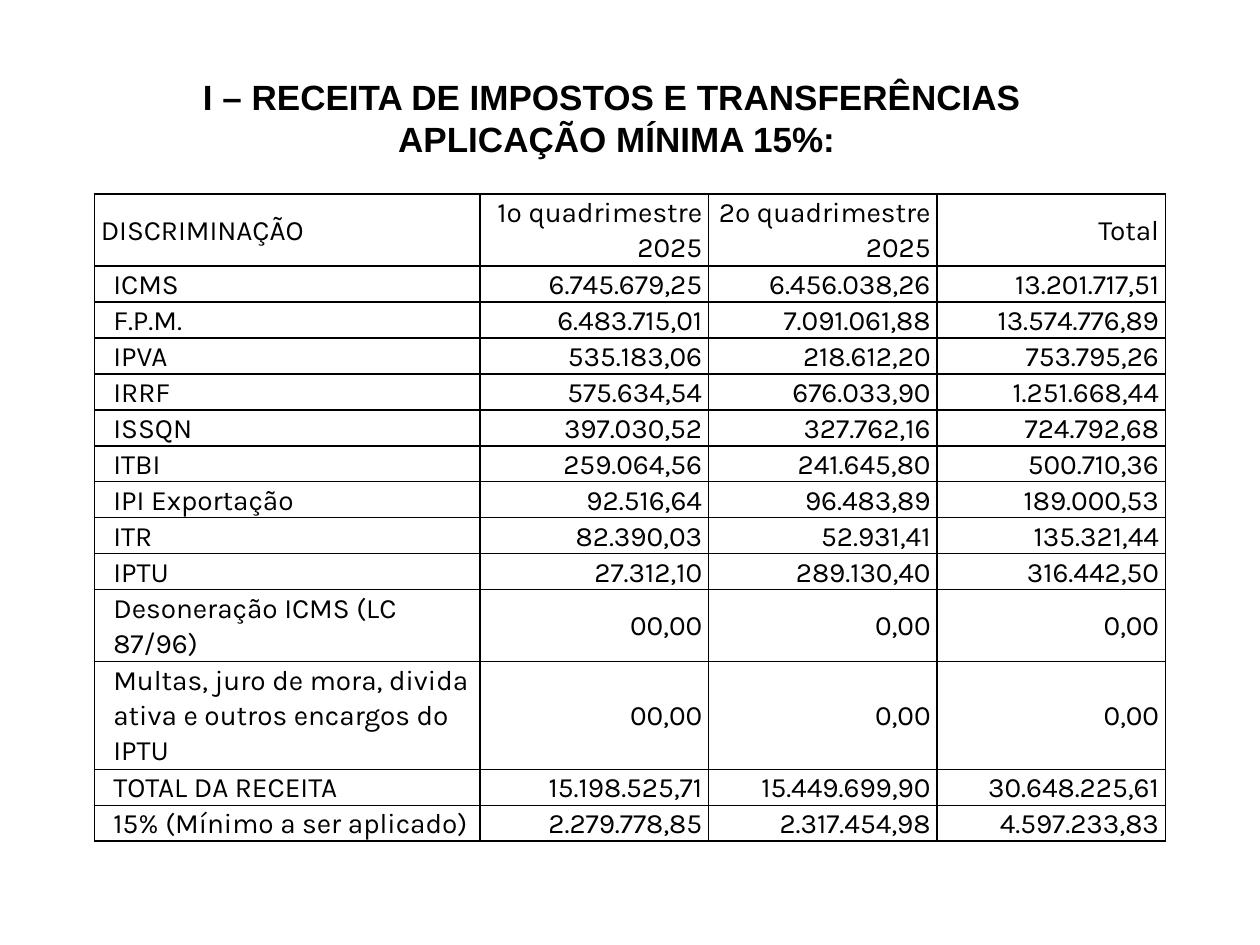
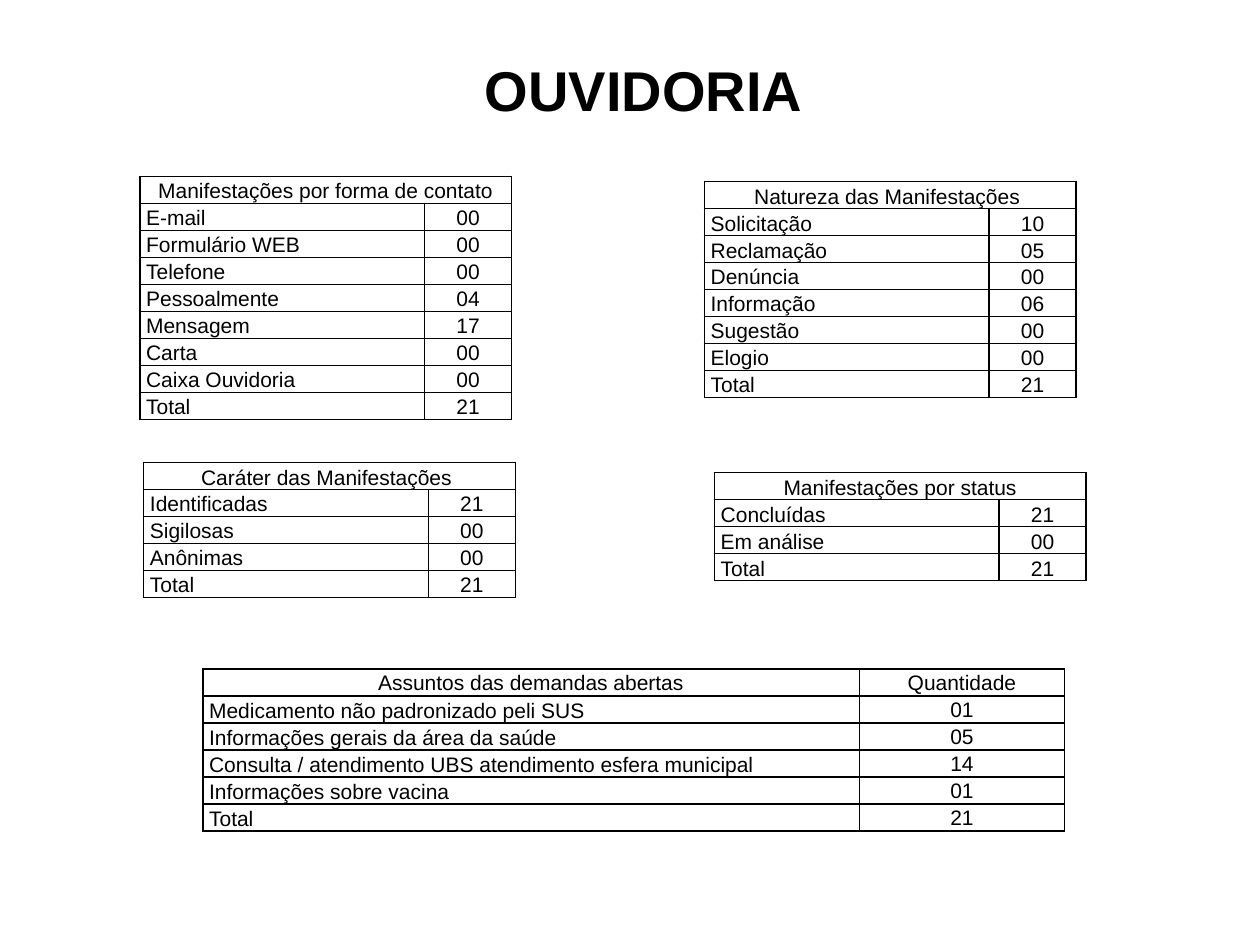
from dataclasses import dataclass

import pptx
import pptx.dml.color
import pptx.enum.text
import pptx.oxml
import pptx.oxml.ns
import pptx.slide
import pptx.table
import pptx.text.text
import pptx.util

Inches = pptx.util.Inches
RGBColor = pptx.dml.color.RGBColor
Align = pptx.enum.text.PP_ALIGN
Anchor = pptx.enum.text.MSO_ANCHOR

BLACK = RGBColor(0x00, 0x00, 0x00)
TITLE_FONT = "Arial"
CELL_MARGIN = 0.05
BORDER_WIDTH = pptx.util.Pt(1)
BORDER_SIDES = ("lnL", "lnR", "lnT", "lnB")


@dataclass(frozen=True)
class Title:
    left: float
    top: float
    width: float
    height: float
    text: str
    size: int
    align: Align
    wrap: bool


@dataclass(frozen=True)
class GridStyle:
    font: str
    size: int
    line_height: float
    header_aligns: tuple[Align, ...]
    value_align: Align
    label_anchor: Anchor
    value_anchor: Anchor
    header_anchor: Anchor
    label_indent: float = 0
    label_column: int = 0


@dataclass(frozen=True)
class Grid:
    left: float
    top: float
    widths: tuple[float, ...]
    header: tuple[str, ...]
    rows: tuple[tuple[str, ...], ...]
    style: GridStyle
    tall_rows: tuple[tuple[int, int], ...] = ()


REVENUE_STYLE = GridStyle(
    "Karla", 16, 0.28, (Align.LEFT, Align.RIGHT, Align.RIGHT, Align.RIGHT),
    Align.RIGHT, Anchor.MIDDLE, Anchor.MIDDLE, Anchor.MIDDLE, label_indent=0.1,
)
COUNT_STYLE = GridStyle(
    "Arial", 12, 0.21, (Align.CENTER,),
    Align.CENTER, Anchor.BOTTOM, Anchor.BOTTOM, Anchor.BOTTOM,
)
SUBJECT_STYLE = GridStyle(
    "Arial", 12, 0.21, (Align.CENTER, Align.CENTER),
    Align.CENTER, Anchor.BOTTOM, Anchor.MIDDLE, Anchor.MIDDLE, label_column=1,
)
REVENUE_WIDTH = 8.5
REVENUE_LABEL_WIDTH = 3.06
REVENUE_VALUE_WIDTH = (REVENUE_WIDTH - REVENUE_LABEL_WIDTH) / 3
COUNT_WIDTHS = (2.26, 0.69)

REVENUE_TITLE = Title(
    1.48, 0.55, 6.83, 0.77,
    "I – RECEITA DE IMPOSTOS E TRANSFERÊNCIAS \nAPLICAÇÃO MÍNIMA 15%:",
    20, Align.CENTER, False,
)
OMBUDSMAN_TITLE = Title(3.75, 0.39, 3.59, 0.64, "OUVIDORIA", 32, Align.LEFT, True)

REVENUE = Grid(
    0.75, 1.54, (REVENUE_LABEL_WIDTH, *[REVENUE_VALUE_WIDTH] * 3),
    ("DISCRIMINAÇÃO", "1º quadrimestre 2025", "2º quadrimestre 2025", "Total"),
    (
        ("ICMS", "6.745.679,25", "6.456.038,26", "13.201.717,51"),
        ("F.P.M.", "6.483.715,01", "7.091.061,88", "13.574.776,89"),
        ("IPVA", "535.183,06", "218.612,20", "753.795,26"),
        ("IRRF", "575.634,54", "676.033,90", "1.251.668,44"),
        ("ISSQN", "397.030,52", "327.762,16", "724.792,68"),
        ("ITBI", "259.064,56", "241.645,80", "500.710,36"),
        ("IPI Exportação", "92.516,64", "96.483,89", "189.000,53"),
        ("ITR", "82.390,03", "52.931,41", "135.321,44"),
        ("IPTU", "27.312,10", "289.130,40", "316.442,50"),
        ("Desoneração ICMS (LC 87/96)", "00,00", "0,00", "0,00"),
        ("Multas, juro de mora, divida ativa e outros encargos do IPTU",
         "00,00", "0,00", "0,00"),
        ("TOTAL DA RECEITA", "15.198.525,71", "15.449.699,90", "30.648.225,61"),
        ("15% (Mínimo a ser aplicado)", "2.279.778,85", "2.317.454,98", "4.597.233,83"),
    ),
    REVENUE_STYLE,
    tall_rows=((0, 2), (10, 2), (11, 3)),
)

OMBUDSMAN_GRIDS = (
    Grid(
        1.11, 1.4, COUNT_WIDTHS, ("Manifestações por forma de contato",),
        (
            ("E-mail", "00"), ("Formulário WEB", "00"), ("Telefone", "00"),
            ("Pessoalmente", "04"), ("Mensagem", "17"), ("Carta", "00"),
            ("Caixa Ouvidoria", "00"), ("Total", "21"),
        ),
        COUNT_STYLE,
    ),
    Grid(
        5.59, 1.44, COUNT_WIDTHS, ("Natureza das Manifestações ",),
        (
            ("Solicitação", "10"), ("Reclamação", "05"), ("Denúncia", "00"),
            ("Informação", "06"), ("Sugestão", "00"), ("Elogio", "00"), ("Total", "21"),
        ),
        COUNT_STYLE,
    ),
    Grid(
        1.14, 3.67, COUNT_WIDTHS, ("Caráter das Manifestações ",),
        (("Identificadas", "21"), ("Sigilosas", "00"), ("Anônimas", "00"), ("Total", "21")),
        COUNT_STYLE,
    ),
    Grid(
        5.67, 3.75, COUNT_WIDTHS, ("Manifestações por status",),
        (("Concluídas", "21"), ("Em análise", "00"), ("Total", "21")),
        COUNT_STYLE,
    ),
    Grid(
        1.3, 5.31, (0.31, 5.21, 1.63), ("Assuntos das demandas abertas", "Quantidade"),
        (
            ("Medicamento não padronizado peli SUS", "01"),
            ("Informações gerais da área da saúde", "05"),
            ("Consulta / atendimento UBS atendimento esfera municipal", "14"),
            ("Informações sobre vacina", "01"),
            ("Total", "21"),
        ),
        SUBJECT_STYLE,
    ),
)


def format_runs(para: pptx.text.text._Paragraph, font: str, size: int, bold: bool) -> None:
    for span in para.runs:
        span.font.name = font
        span.font.size = pptx.util.Pt(size)
        span.font.bold = bold
        span.font.color.rgb = BLACK


def draw_title(page: pptx.slide.Slide, title: Title) -> None:
    box = page.shapes.add_textbox(
        Inches(title.left), Inches(title.top), Inches(title.width), Inches(title.height)
    )
    frame = box.text_frame
    frame.text = title.text
    frame.word_wrap = title.wrap
    frame.auto_size = pptx.enum.text.MSO_AUTO_SIZE.SHAPE_TO_FIT_TEXT
    frame.vertical_anchor = Anchor.MIDDLE
    for para in frame.paragraphs:
        para.alignment = title.align
        format_runs(para, TITLE_FONT, title.size, True)


def style_cell(cell: pptx.table._Cell, sides: tuple[str, ...], size: int) -> None:
    properties = cell._tc.get_or_add_tcPr()
    for side in BORDER_SIDES:
        paint = "<a:noFill/>"
        if side in sides:
            paint = f'<a:solidFill><a:srgbClr val="{BLACK}"/></a:solidFill>'
        properties.append(pptx.oxml.parse_xml(
            f'<a:{side} {pptx.oxml.ns.nsdecls("a")} w="{BORDER_WIDTH}">{paint}</a:{side}>'
        ))
    cell.fill.background()
    cell.margin_left = cell.margin_right = Inches(CELL_MARGIN)
    cell.margin_top = cell.margin_bottom = 0
    end_format = cell.text_frame.paragraphs[0]._p.get_or_add_endParaRPr()
    end_format.set("sz", str(size * 100))


def write_cell(
    cell: pptx.table._Cell, text: str, style: GridStyle, align: Align, anchor: Anchor
) -> None:
    cell.text_frame.text = text
    cell.vertical_anchor = anchor
    para = cell.text_frame.paragraphs[0]
    para.alignment = align
    para.line_spacing = 1.07
    format_runs(para, style.font, style.size, False)


def draw_grid(page: pptx.slide.Slide, grid: Grid) -> None:
    style = grid.style
    first = style.label_column
    tall_rows = dict(grid.tall_rows)
    heights = [
        style.line_height * tall_rows.get(index, 1) for index in range(len(grid.rows) + 1)
    ]
    table = page.shapes.add_table(
        len(heights), len(grid.widths), Inches(grid.left), Inches(grid.top),
        Inches(sum(grid.widths)), Inches(sum(heights)),
    ).table
    table.first_row = False
    table.horz_banding = False
    for column, width in zip(table.columns, grid.widths):
        column.width = Inches(width)
    for row, height in zip(table.rows, heights):
        row.height = Inches(height)
        for column, cell in enumerate(row.cells):
            style_cell(cell, BORDER_SIDES if column >= first else ("lnR",), style.size)

    if len(grid.header) < len(grid.widths) - first:
        table.cell(0, first).merge(table.cell(0, len(grid.widths) - 1))
    for column, (text, align) in enumerate(zip(grid.header, style.header_aligns), first):
        write_cell(table.cell(0, column), text, style, align, style.header_anchor)

    for row, (label, *values) in enumerate(grid.rows, start=1):
        label_cell = table.cell(row, first)
        write_cell(label_cell, label, style, Align.LEFT, style.label_anchor)
        label_cell.margin_left = Inches(CELL_MARGIN + style.label_indent)
        for column, value in enumerate(values, start=first + 1):
            write_cell(
                table.cell(row, column), value, style, style.value_align, style.value_anchor
            )


def main() -> None:
    deck = pptx.Presentation()
    deck.slide_width = Inches(10)
    deck.slide_height = Inches(7.5)
    blank = deck.slide_layouts[6]
    for title, grids in ((REVENUE_TITLE, (REVENUE,)), (OMBUDSMAN_TITLE, OMBUDSMAN_GRIDS)):
        page = deck.slides.add_slide(blank)
        draw_title(page, title)
        for grid in grids:
            draw_grid(page, grid)
    deck.save("out.pptx")


if __name__ == "__main__":
    main()
